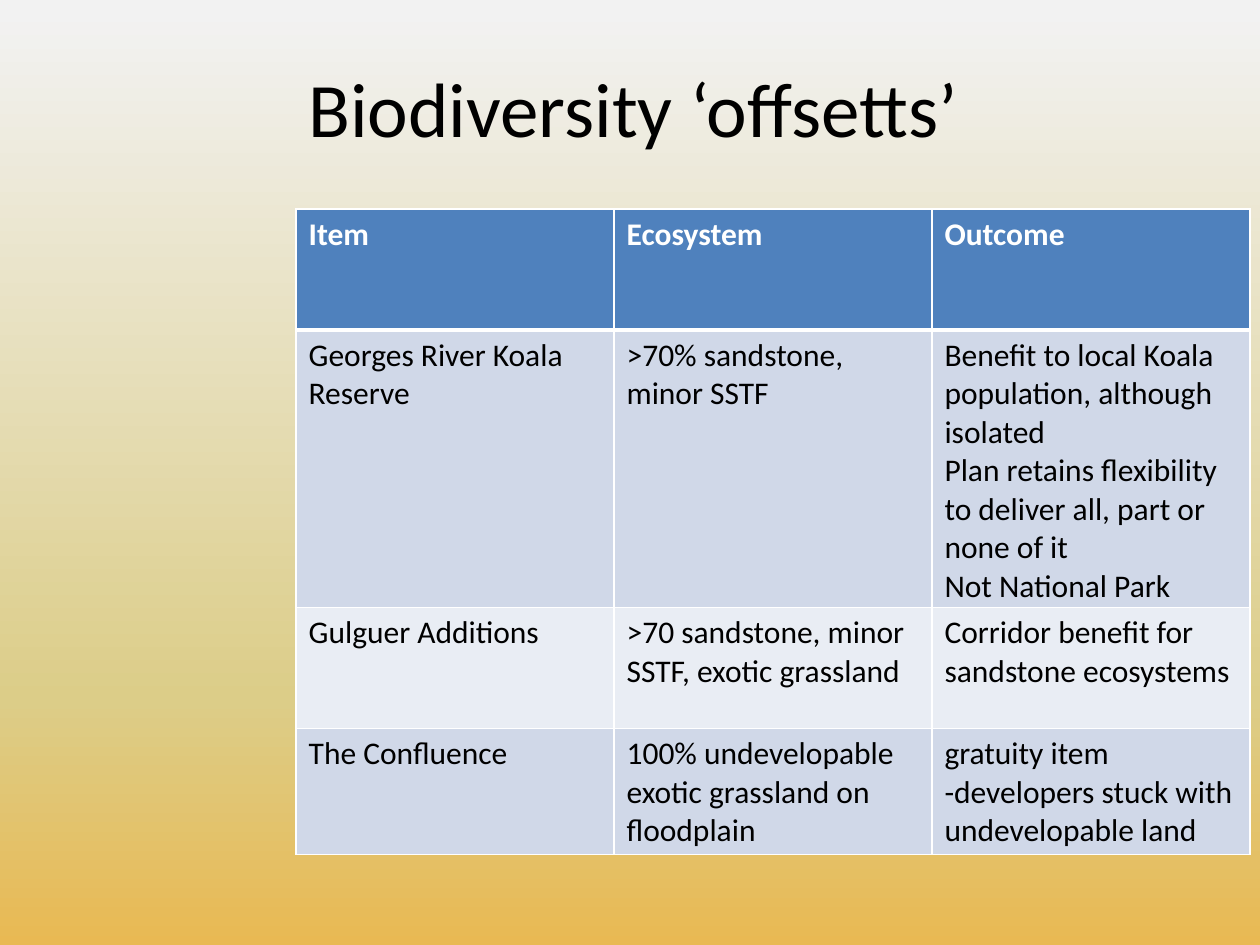
from copy import deepcopy

from lxml import etree
from pptx import Presentation
from pptx.dml.color import RGBColor
from pptx.enum.text import MSO_ANCHOR
from pptx.oxml.ns import qn
from pptx.util import Inches, Pt

FONT = "Calibri"
BLACK = RGBColor(0x00, 0x00, 0x00)
WHITE = RGBColor(0xFF, 0xFF, 0xFF)
HEADER_BLUE = RGBColor(0x4F, 0x81, 0xBD)
BAND_DARK = RGBColor(0xD0, 0xD8, 0xE8)
BAND_LIGHT = RGBColor(0xE9, 0xED, 0xF4)
SKY_STOPS = [
    (0.01, RGBColor(0xF2, 0xF2, 0xF2)),
    (0.74, RGBColor(0xDC, 0xCD, 0x88)),
    (1.0, RGBColor(0xE9, 0xB9, 0x53)),
]

# "\n" starts a paragraph, "\v" a new line within one
OFFSETS = [
    ("Item", "Ecosystem", "Outcome"),
    ("Georges River Koala Reserve", ">70% sandstone, minor SSTF",
     "Benefit to local Koala population, although isolated\n"
     "Plan retains flexibility to deliver all, part or none of it\n"
     "Not National Park"),
    ("Gulguer Additions", ">70 sandstone, minor SSTF, exotic grassland",
     "Corridor benefit for sandstone ecosystems"),
    ("The Confluence", "100% undevelopable exotic grassland on floodplain",
     "gratuity item\v-developers stuck with undevelopable land"),
]


def style_text(tf, size, color, bold=False):
    for p in tf.paragraphs:
        p.font.name = FONT
        p.font.size = Pt(size)
        p.font.bold = bold
        p.font.color.rgb = color


def paint_background(slide):
    fill = slide.background.fill
    fill.gradient()
    fill.gradient_angle = 270  # counter-clockwise, so top to bottom
    stop_list = slide.element.find(".//" + qn("a:gsLst"))
    stop_list.append(deepcopy(stop_list[-1]))
    for stop, (position, color) in zip(fill.gradient_stops, SKY_STOPS):
        stop.position = position
        stop.color.rgb = color


def add_title(slide, left, top, width, height):
    tf = slide.shapes.add_textbox(left, top, width, height).text_frame
    tf.word_wrap = True
    tf.vertical_anchor = MSO_ANCHOR.MIDDLE
    tf.text = "Biodiversity ‘offsetts’"
    style_text(tf, 44, BLACK)


def set_borders(cell, top=1, bottom=1):
    """Draw white borders; call before the fill, which must follow them."""
    tc_pr = cell._tc.get_or_add_tcPr()
    for side, width in (("L", 1), ("R", 1), ("T", top), ("B", bottom)):
        ln = etree.SubElement(tc_pr, qn(f"a:ln{side}"), w=str(Pt(width)))
        solid = etree.SubElement(ln, qn("a:solidFill"))
        etree.SubElement(solid, qn("a:srgbClr"), val=str(WHITE))


def add_offsets_table(slide, left, top, width, row_height):
    n_rows, n_cols = len(OFFSETS), len(OFFSETS[0])
    table = slide.shapes.add_table(
        n_rows, n_cols, left, top, width, row_height * n_rows).table
    for r, row in enumerate(OFFSETS):
        header = r == 0
        band = HEADER_BLUE if header else BAND_DARK if r % 2 else BAND_LIGHT
        for c, text in enumerate(row):
            cell = table.cell(r, c)
            set_borders(cell, top=3 if r == 1 else 1, bottom=3 if header else 1)
            cell.fill.solid()
            cell.fill.fore_color.rgb = band
            cell.text_frame.text = text
            style_text(cell.text_frame, 18, WHITE if header else BLACK, header)


def main():
    prs = Presentation()
    prs.slide_width, prs.slide_height = Inches(10), Inches(7.5)
    slide = prs.slides.add_slide(prs.slide_layouts[6])
    paint_background(slide)
    add_title(slide, Inches(2.35), Inches(0.3), Inches(6.9), Inches(1.09))
    add_offsets_table(slide, Inches(2.35), Inches(1.66), Inches(7.57), Inches(0.96))
    prs.save("out.pptx")


if __name__ == "__main__":
    main()
